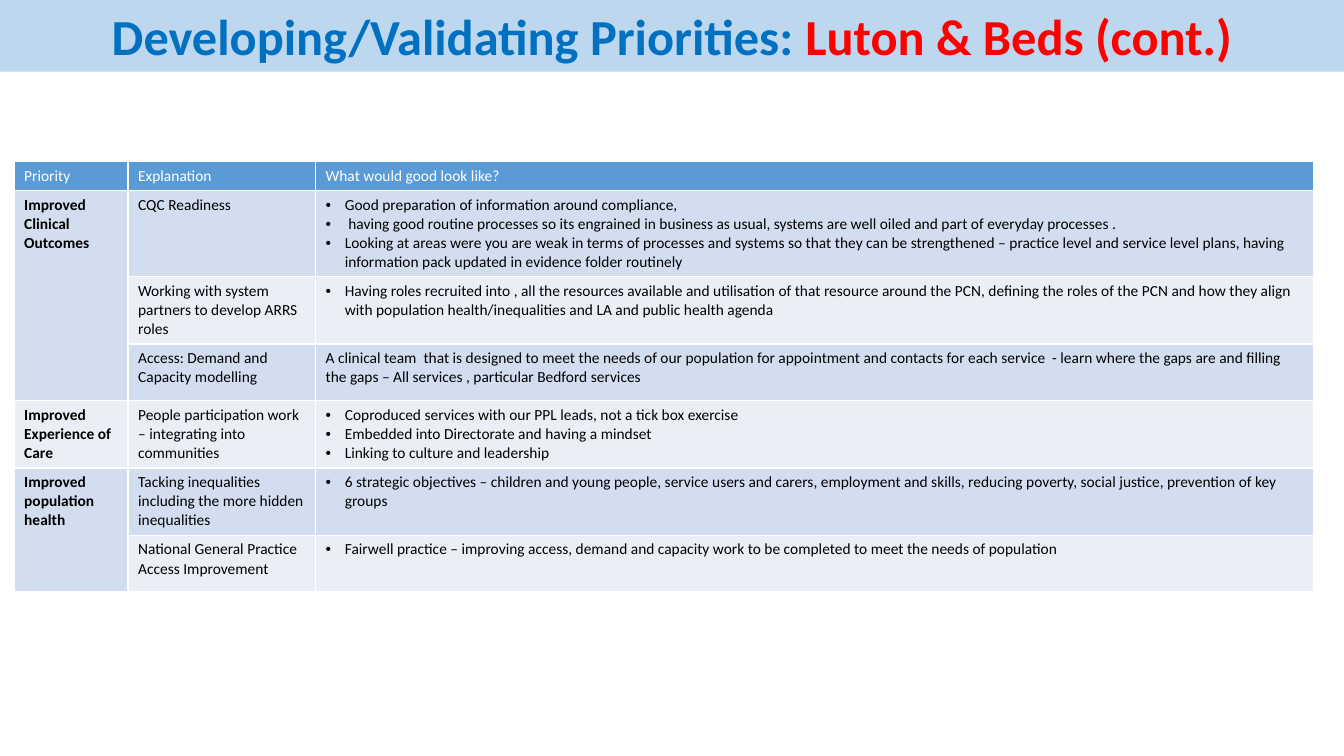
import pptx
import pptx.dml.color
import pptx.enum.text
import pptx.oxml.ns
import pptx.util
from lxml import etree

Inches = pptx.util.Inches

# Content
TITLE = [("Developing/Validating Priorities: ", "title"),
         ("Luton & Beds (cont.)", "accent")]
HEADERS = ["Priority", "Explanation", "What would good look like?"]
# Each priority holds (explanation, outcome); a list outcome is bulleted
PRIORITIES = [
    ("Improved Clinical Outcomes", [
        ("CQC Readiness", [
            "Good preparation of information around compliance,",
            " having good routine processes so its engrained in business as usual, "
            "systems are well oiled and part of everyday processes .",
            "Looking at areas were you are weak in terms of processes and systems so that "
            "they can be strengthened – practice level and service level plans, having "
            "information pack updated in evidence folder routinely"]),
        ("Working with system partners to develop ARRS roles", [
            "Having roles recruited into , all the resources available and utilisation of "
            "that resource around the PCN, defining the roles of the PCN and how they align "
            "with population health/inequalities and LA and public health agenda"]),
        ("Access: Demand and Capacity modelling",
            "A clinical team  that is designed to meet the needs of our population for "
            "appointment and contacts for each service  - learn where the gaps are and "
            "filling the gaps – All services , particular Bedford services"),
    ]),
    ("Improved Experience of Care", [
        ("People participation work – integrating into communities", [
            "Coproduced services with our PPL leads, not a tick box exercise",
            "Embedded into Directorate and having a mindset",
            "Linking to culture and leadership"]),
    ]),
    ("Improved population health", [
        ("Tacking inequalities including the more hidden inequalities", [
            "6 strategic objectives – children and young people, service users and carers, "
            "employment and skills, reducing poverty, social justice, prevention of key "
            "groups"]),
        ("National General Practice Access Improvement", [
            "Fairwell practice – improving access, demand and capacity work to be completed "
            "to meet the needs of population"]),
    ]),
]

THEME = {
    "font": "Calibri", "title_size": 36, "table_size": 11,
    "banner": "BDD7EE", "title": "0070C0", "accent": "FF0000",
    "header": "5B9BD5", "header_text": "FFFFFF", "text": "000000",
    "bands": ["EAEFF7", "D2DEEF"],
}
SLIDE_W, SLIDE_H = 13.33, 7.5
BANNER_H = 0.71
TABLE_LEFT, TABLE_TOP = 0.14, 1.6
COL_WIDTHS = [1.13, 1.86, 9.9]
ROW_HEIGHTS = [0.28, 0.85, 0.67, 0.56, 0.67, 0.66, 0.56]
BULLET_INDENT = 0.19


def color(name):
    return pptx.dml.color.RGBColor.from_string(THEME.get(name, name))


def style_font(font, size, name, bold):
    font.name = THEME["font"]
    font.size = pptx.util.Pt(size)
    font.color.rgb = color(name)
    font.bold = bold


def add_bullet(p):
    pPr = p._p.get_or_add_pPr()
    pPr.set("marL", str(Inches(BULLET_INDENT)))
    pPr.set("indent", str(-Inches(BULLET_INDENT)))
    for tag, key, value in (("a:buFont", "typeface", "Arial"), ("a:buChar", "char", "•")):
        etree.SubElement(pPr, pptx.oxml.ns.qn(tag)).set(key, value)


def fill_cell(cell, content, fill, text="text", bold=False):
    cell.fill.solid()
    cell.fill.fore_color.rgb = color(fill)
    bulleted = isinstance(content, list)
    lines = content if bulleted else [content]
    tf = cell.text_frame
    for i, line in enumerate(lines):
        p = tf.add_paragraph() if i else tf.paragraphs[0]
        if bulleted:
            add_bullet(p)
        r = p.add_run()
        r.text = line
        style_font(r.font, THEME["table_size"], text, bold)


prs = pptx.Presentation()
prs.slide_width, prs.slide_height = Inches(SLIDE_W), Inches(SLIDE_H)
s = prs.slides.add_slide(prs.slide_layouts[5])

# Title banner
banner = s.shapes.title
banner.left, banner.top = 0, 0
banner.width, banner.height = prs.slide_width, Inches(BANNER_H)
banner.fill.solid()
banner.fill.fore_color.rgb = color("banner")
tf = banner.text_frame
tf.word_wrap = True
tf.auto_size = pptx.enum.text.MSO_AUTO_SIZE.NONE
tf.vertical_anchor = pptx.enum.text.MSO_ANCHOR.MIDDLE
p = tf.paragraphs[0]
p.alignment = pptx.enum.text.PP_ALIGN.CENTER
for words, name in TITLE:
    r = p.add_run()
    r.text = words
    style_font(r.font, THEME["title_size"], name, True)

# Table grid
table = s.shapes.add_table(
    len(ROW_HEIGHTS), len(COL_WIDTHS), Inches(TABLE_LEFT), Inches(TABLE_TOP),
    Inches(sum(COL_WIDTHS)), Inches(sum(ROW_HEIGHTS))).table
for col, width in zip(table.columns, COL_WIDTHS):
    col.width = Inches(width)
for row, height in zip(table.rows, ROW_HEIGHTS):
    row.height = Inches(height)

# Header row
for c, header in enumerate(HEADERS):
    fill_cell(table.cell(0, c), header, "header", "header_text")

# Priorities, each merged down over its explanations
row = 1
for priority, items in PRIORITIES:
    first = table.cell(row, 0)
    fill_cell(first, priority, THEME["bands"][row % 2], bold=True)
    if len(items) > 1:
        first.merge(table.cell(row + len(items) - 1, 0))
    for explanation, outcome in items:
        band = THEME["bands"][row % 2]
        fill_cell(table.cell(row, 1), explanation, band)
        fill_cell(table.cell(row, 2), outcome, band)
        row += 1

prs.save("out.pptx")
